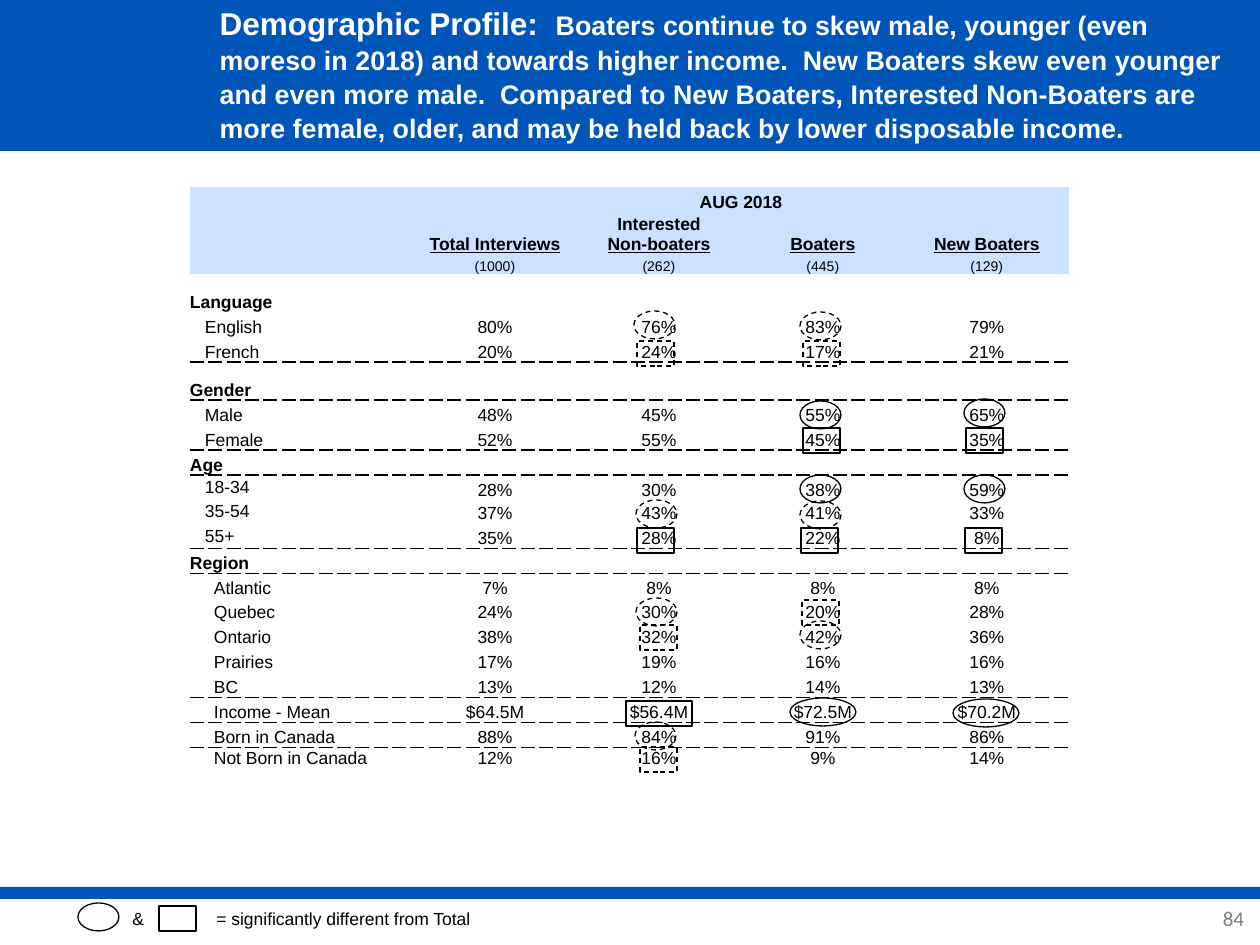
from typing import NamedTuple

from lxml import etree
from pptx import Presentation
from pptx import util as u
from pptx.dml.color import RGBColor
from pptx.enum import dml, shapes, text
from pptx.oxml.ns import qn

PX = 914400 // 126
BLUE = RGBColor(0x00, 0x55, 0xB9)
PALE = RGBColor(0xCA, 0xE2, 0xFF)
WHITE = RGBColor(0xFF, 0xFF, 0xFF)
BLACK = RGBColor(0x00, 0x00, 0x00)
GREY = RGBColor(0x80, 0x80, 0x80)
RECT, OVAL = shapes.MSO_SHAPE.RECTANGLE, shapes.MSO_SHAPE.OVAL
MIDDLE, BOTTOM = text.MSO_ANCHOR.MIDDLE, text.MSO_ANCHOR.BOTTOM
CENTER, LEFT, RIGHT = text.PP_ALIGN.CENTER, text.PP_ALIGN.LEFT, text.PP_ALIGN.RIGHT
NO_STYLE = "{2D5ABB26-0587-4C30-8999-92F81FD0307C}"


class Row(NamedTuple):
    label: str
    values: str = ""
    indent: int = 0
    height: int = 25
    rule: bool = False  # dashed line below
    anchor: text.MSO_ANCHOR = BOTTOM


class Mark(NamedTuple):
    kind: shapes.MSO_SHAPE
    left: int
    top: int
    dashed: bool = False
    wide: bool = False


HEADINGS = ["Total Interviews", "Interested\nNon-boaters", "Boaters", "New Boaters"]
BASES = ["(1000)", "(262)", "(445)", "(129)"]
HEADER_HEIGHTS = [25, 42, 20]
COLUMN_WIDTHS = [223, 164, 164, 164, 164]
ROWS = [
    Row("Language", height=38),
    Row("English", "80% 76% 83% 79%", 15),
    Row("French", "20% 24% 17% 21%", 15, rule=True),
    Row("Gender", height=38),
    Row("Male", "48% 45% 55% 65%", 15),
    Row("Female", "52% 55% 45% 35%", 15, rule=True),
    Row("Age"),
    Row("18-34", "28% 30% 38% 59%", 15, anchor=MIDDLE),
    Row("35-54", "37% 43% 41% 33%", 15, 24, anchor=MIDDLE),
    Row("55+", "35% 28% 22% 8%", 15, rule=True, anchor=MIDDLE),
    Row("Region"),
    Row("Atlantic", "7% 8% 8% 8%", 24),
    Row("Quebec", "24% 30% 20% 28%", 24, 24),
    Row("Ontario", "38% 32% 42% 36%", 24),
    Row("Prairies", "17% 19% 16% 16%", 24),
    Row("BC", "13% 12% 14% 13%", 24, rule=True),
    Row("Income - Mean", "$64.5M $56.4M $72.5M $70.2M", 24, rule=True),
    Row("Born in Canada", "88% 84% 91% 86%", 24),
    Row("Not Born in Canada", "12% 16% 9% 14%", 24, 20),
]
MARKS = [
    # Language
    Mark(OVAL, 634, 311, True), Mark(OVAL, 800, 312, True),
    Mark(RECT, 637, 341, True), Mark(RECT, 803, 341, True),
    # Gender
    Mark(OVAL, 800, 401), Mark(OVAL, 964, 399),
    Mark(RECT, 803, 428), Mark(RECT, 966, 428),
    # Age
    Mark(OVAL, 800, 475), Mark(OVAL, 964, 475),
    Mark(OVAL, 636, 500, True), Mark(OVAL, 800, 501, True),
    Mark(RECT, 637, 528), Mark(RECT, 801, 528), Mark(RECT, 965, 528),
    # Region
    Mark(OVAL, 636, 598, True), Mark(RECT, 802, 600, True),
    Mark(RECT, 640, 625, True), Mark(OVAL, 800, 621, True),
    # Income and birthplace
    Mark(RECT, 626, 701, wide=True), Mark(OVAL, 790, 698, wide=True),
    Mark(OVAL, 953, 699, wide=True),
    Mark(OVAL, 635, 722, True), Mark(RECT, 640, 747, True),
    # Legend
    Mark(OVAL, 78, 903), Mark(RECT, 159, 906),
]


def box(left: int, top: int, width: int, height: int) -> list[int]:
    return [n * PX for n in (left, top, width, height)]


def add_run(paragraph, words: str, size: float, color=BLACK, face="Arial", **extra):
    run = paragraph.add_run()
    run.text = words
    run.font.color.rgb = color
    for name, value in {"size": u.Pt(size), "name": face, **extra}.items():
        setattr(run.font, name, value)


def add_bar(slide, top: int, height: int) -> None:
    bar = slide.shapes.add_shape(RECT, *box(0, top, 1260, height))
    bar.shadow.inherit = False
    bar.fill.solid()
    bar.fill.fore_color.rgb = BLUE
    bar.line.fill.background()


def add_mark(slide, mark: Mark) -> None:
    width, height = (37, 25) if mark.kind == RECT else (41, 28)
    outline = slide.shapes.add_shape(
        mark.kind, *box(mark.left, mark.top, 66 if mark.wide else width, height))
    outline.shadow.inherit = False
    outline.fill.background()
    outline.line.color.rgb = BLACK
    outline.line.width = u.Pt(0.75)
    if mark.dashed:
        outline.line.dash_style = dml.MSO_LINE.DASH


def add_rule(cell, side: str) -> None:
    line = etree.SubElement(cell._tc.get_or_add_tcPr(), qn(f"a:{side}"), w="12700")
    fill = etree.SubElement(line, qn("a:solidFill"))
    etree.SubElement(fill, qn("a:srgbClr"), val=str(BLACK))
    etree.SubElement(line, qn("a:prstDash"), val="dash")


def fill_cell(cell, words: str, color=WHITE, align=CENTER, anchor=BOTTOM,
              indent=0, size=10, bold=False, underline=False) -> None:
    layout = {"margin_left": indent * PX, "margin_right": 0, "margin_top": 0,
              "margin_bottom": 0, "vertical_anchor": anchor}
    for name, value in layout.items():
        setattr(cell, name, value)
    cell.fill.solid()
    cell.fill.fore_color.rgb = color
    paragraph = cell.text_frame.paragraphs[0]
    paragraph.alignment = align
    if not words:
        etree.SubElement(paragraph._p, qn("a:endParaRPr"), sz="800")
        return
    *upper, last = words.split("\n")
    for line in upper:
        add_run(paragraph, line, size, bold=bold)
        paragraph.add_line_break()
    add_run(paragraph, last, size, bold=bold, underline=underline)


def add_profile_table(slide) -> None:
    heights = HEADER_HEIGHTS + [row.height for row in ROWS]
    table = slide.shapes.add_table(
        len(heights), 5, *box(190, 187, sum(COLUMN_WIDTHS), sum(heights))).table
    table.first_row = table.horz_banding = False
    table._tbl.tblPr.find(qn("a:tableStyleId")).text = NO_STYLE
    for column, width in zip(table.columns, COLUMN_WIDTHS):
        column.width = width * PX
    for line, height in zip(table.rows, heights):
        line.height = height * PX

    # Header rows
    table.cell(0, 1).merge(table.cell(0, 4))
    headers = [(["AUG 2018", "", "", ""], {"bold": True}),
               (HEADINGS, {"bold": True, "underline": True}), (BASES, {"size": 8})]
    for r, (words, style) in enumerate(headers):
        for c, word in enumerate(["", *words]):
            fill_cell(table.cell(r, c), word, PALE, **style)

    # Body rows
    ruled_above = False
    for r, row in enumerate(ROWS, len(headers)):
        values = row.values.split() or [""] * 4
        for c, word in enumerate([row.label, *values]):
            cell = table.cell(r, c)
            for side, ruled in (("lnT", ruled_above), ("lnB", row.rule)):
                if ruled:
                    add_rule(cell, side)
            if c:
                fill_cell(cell, word)
            else:
                fill_cell(cell, word, align=LEFT, anchor=row.anchor,
                          indent=row.indent, bold=not row.values)
        ruled_above = row.rule


def add_title(slide) -> None:
    title = slide.shapes.title
    title.left, title.top, title.width, title.height = box(207, 0, 1053, 145)
    frame = title.text_frame
    for name, value in {"vertical_anchor": MIDDLE, "word_wrap": True,
                        "auto_size": text.MSO_AUTO_SIZE.NONE}.items():
        setattr(frame, name, value)
    paragraph = frame.paragraphs[0]
    paragraph.alignment = LEFT
    paragraph.line_spacing = 1.06
    add_run(paragraph, "Demographic Profile:  ", 18, WHITE, bold=True)
    add_run(paragraph, "Boaters continue to skew male, younger (even moreso in 2018) and "
            "towards higher income.  New Boaters skew even younger and even more male.  "
            "Compared to New Boaters, Interested Non-Boaters are more female, older, and "
            "may be held back by lower disposable income.", 15.3, WHITE, bold=True)
    slide.shapes._spTree.append(title._element)  # in front of the bar


def add_footer(slide) -> None:
    number = slide.shapes.add_textbox(*box(1179, 893, 80, 51)).text_frame
    for name, value in {"vertical_anchor": MIDDLE, "word_wrap": True,
                        "margin_left": 5 * PX, "margin_right": 15 * PX}.items():
        setattr(number, name, value)
    number.paragraphs[0].alignment = RIGHT
    add_run(number.paragraphs[0], "84", 12, GREY, "Calibri")

    legend = slide.shapes.add_textbox(*box(120, 902, 724, 34)).text_frame
    legend.word_wrap = True
    paragraph = legend.paragraphs[0]
    tabs = etree.SubElement(paragraph._p.get_or_add_pPr(), qn("a:tabLst"))
    etree.SubElement(tabs, qn("a:tab"), pos=str(84 * PX), algn="l")
    add_run(paragraph, "&\t= significantly different from Total", 10)


def main() -> None:
    deck = Presentation()
    deck.slide_width, deck.slide_height = u.Inches(10), u.Inches(7.5)
    slide = deck.slides.add_slide(deck.slide_layouts[5])
    add_bar(slide, -4, 155)
    add_bar(slide, 887, 12)
    add_title(slide)
    add_footer(slide)
    add_profile_table(slide)
    for mark in MARKS:
        add_mark(slide, mark)
    deck.save("out.pptx")


if __name__ == "__main__":
    main()
